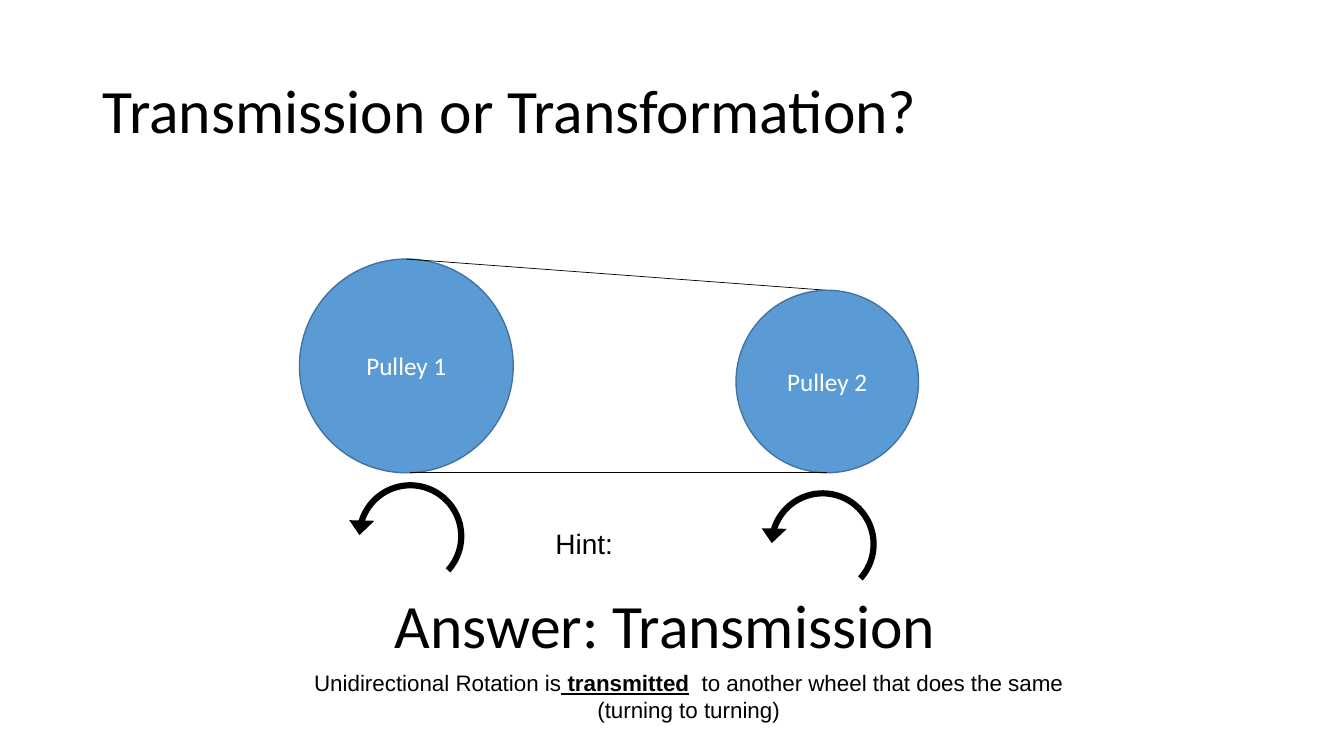
from lxml.etree import SubElement
from pptx import Presentation
from pptx.dml.color import RGBColor
from pptx.enum.shapes import MSO_CONNECTOR, MSO_SHAPE
from pptx.enum.text import MSO_ANCHOR, MSO_AUTO_SIZE, PP_ALIGN
from pptx.oxml.ns import qn
from pptx.util import Inches, Pt


def color(value):
    """Turn a hex string into a colour."""
    return RGBColor.from_string(value)


def add_run(paragraph, text, size, font, ink="000000", bold=False, underline=False):
    """Append one formatted run to a paragraph."""
    run = paragraph.add_run()
    run.text = text
    run.font.size = Pt(size)
    run.font.name = font
    run.font.color.rgb = color(ink)
    run.font.bold = bold
    run.font.underline = underline


def add_title(slide, left, top, width, height, text):
    """Place and format the title placeholder in its box."""
    title = slide.shapes.title
    title.left, title.top = Inches(left), Inches(top)
    title.width, title.height = Inches(width), Inches(height)
    frame = title.text_frame
    frame.auto_size = MSO_AUTO_SIZE.NONE
    frame.vertical_anchor = MSO_ANCHOR.MIDDLE
    paragraph = frame.paragraphs[0]
    paragraph.alignment = PP_ALIGN.LEFT
    paragraph.line_spacing = 0.9
    add_run(paragraph, text, 44, "Calibri")


def add_text(slide, left, top, width, height, lines, size, font,
             alignment=PP_ALIGN.CENTER, anchor=MSO_ANCHOR.TOP, wrap=True):
    """Add a text box whose lines are lists of (text, bold, underline)."""
    box = slide.shapes.add_textbox(Inches(left), Inches(top), Inches(width), Inches(height))
    frame = box.text_frame
    frame.word_wrap = wrap
    frame.vertical_anchor = anchor
    for index, line in enumerate(lines):
        paragraph = frame.add_paragraph() if index else frame.paragraphs[0]
        paragraph.alignment = alignment
        for text, bold, underline in line:
            add_run(paragraph, text, size, font, bold=bold, underline=underline)


def add_pulley(slide, left, top, diameter, label):
    """Add a labelled pulley wheel."""
    wheel = slide.shapes.add_shape(
        MSO_SHAPE.OVAL, Inches(left), Inches(top), Inches(diameter), Inches(diameter))
    wheel.shadow.inherit = False
    wheel.fill.solid()
    wheel.fill.fore_color.rgb = color("5B9BD5")
    wheel.line.color.rgb = color("43739E")
    wheel.line.width = Pt(1)
    wheel.text_frame.vertical_anchor = MSO_ANCHOR.MIDDLE
    paragraph = wheel.text_frame.paragraphs[0]
    paragraph.alignment = PP_ALIGN.CENTER
    add_run(paragraph, label, 18, "Calibri", "FFFFFF")


def add_belt(slide, start, end):
    """Add one straight side of the belt."""
    belt = slide.shapes.add_connector(
        MSO_CONNECTOR.STRAIGHT, *(Inches(value) for value in (*start, *end)))
    belt.line.color.rgb = color("000000")
    belt.line.width = Pt(0.5)
    SubElement(belt.element.spPr, qn("a:effectLst"))


def add_rotation_arrow(slide, left, top, size=1.26):
    """Add a circular arrow that turns anticlockwise."""
    arrow = slide.shapes.add_shape(
        MSO_SHAPE.CIRCULAR_ARROW, Inches(left), Inches(top), Inches(size), Inches(size))
    arrow.shadow.inherit = False
    arrow.fill.solid()
    arrow.fill.fore_color.rgb = color("000000")
    arrow.line.fill.background()
    for index, value in enumerate((0.049, 10.007, 205.217, 82.682, 0.099)):
        arrow.adjustments[index] = value
    arrow.element.spPr.get_or_add_xfrm().set("flipH", "1")


def add_pulley_system(slide, left, top):
    """Draw two pulleys, their belt and the rotation arrows from a corner."""
    large, small, bottom = 2.12, 1.81, top + 2.12
    small_left, small_top = left + 4.33, bottom - small
    add_pulley(slide, left, top, large, "Pulley 1")
    add_belt(slide, (left + large / 2, top), (small_left + small / 2, small_top))
    add_pulley(slide, small_left, small_top, small, "Pulley 2")
    add_belt(slide, (left + 1.1, bottom), (small_left + small / 2, bottom))
    add_rotation_arrow(slide, left + 0.47, bottom)
    add_rotation_arrow(slide, left + 4.56, bottom + 0.08)


def add_answer(slide, left, top):
    """Place the hint, the answer and its explanation from a corner."""
    add_text(slide, left + 3.31, top - 0.47, 0.78, 0.44, [[("Hint:", False, False)]],
             20, "Arial", PP_ALIGN.LEFT, wrap=False)
    add_text(slide, left, top, 9, 1.1, [[("Answer: Transmission", False, False)]],
             44, "Calibri", anchor=MSO_ANCHOR.MIDDLE)
    explanation = [
        [("Unidirectional Rotation is", False, False), (" transmitted", True, True),
         ("  ", True, False), ("to another wheel that does the same", False, False)],
        [("(turning to turning)", False, False)],
    ]
    add_text(slide, left + 0.79, top + 0.95, 7.88, 0.64, explanation, 16, "Arial")


def main():
    """Build and save the slide."""
    presentation = Presentation()
    presentation.slide_width = Inches(13.33)
    presentation.slide_height = Inches(7.5)
    slide = presentation.slides.add_slide(presentation.slide_layouts[5])
    add_title(slide, 0.92, 0.4, 11.5, 1.45, "Transmission or Transformation?")
    add_pulley_system(slide, 2.97, 2.57)
    add_answer(slide, 2.1, 5.64)
    presentation.save("out.pptx")


if __name__ == "__main__":
    main()
